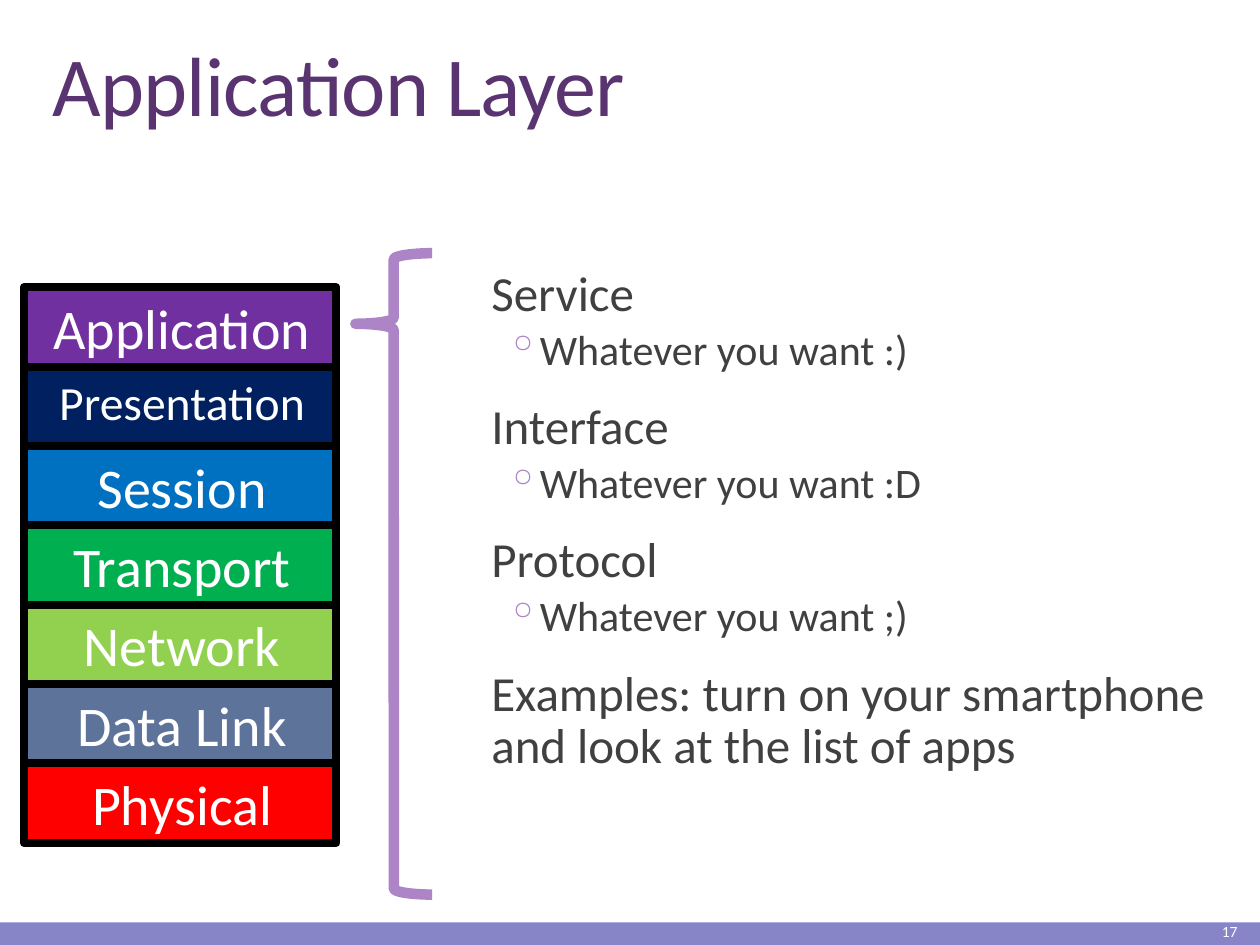
import pptx
import pptx.dml.color
import pptx.enum.shapes
import pptx.enum.text
import pptx.oxml
import pptx.oxml.ns
import pptx.util

Inches = pptx.util.Inches
Pt = pptx.util.Pt
SHAPE = pptx.enum.shapes.MSO_SHAPE
ALIGN = pptx.enum.text.PP_ALIGN
ANCHOR = pptx.enum.text.MSO_ANCHOR

FONT = "Calibri"
WHITE, BLACK = "FFFFFF", "000000"
LILAC = "AD84C6"
BODY_COLOR = "404040"

LAYERS = [
    ("Application", "7030A0"),
    ("Presentation", "002060"),
    ("Session", "0070C0"),
    ("Transport", "00B050"),
    ("Network", "92D050"),
    ("Data Link", "5D739A"),
    ("Physical", "FF0000"),
]
STACK_TOP, LAYER_HEIGHT = 2.28, 0.63

TOPICS = [
    ("Service", "Whatever you want :)"),
    ("Interface", "Whatever you want :D"),
    ("Protocol", "Whatever you want ;)"),
    ("Examples: turn on your smartphone and look at the list of apps", None),
]


def color(value):
    return pptx.dml.color.RGBColor.from_string(value)


def add_shape(slide, kind, box, fill=None, line=None, width=1):
    shape = slide.shapes.add_shape(kind, *map(Inches, box))
    shape.shadow.inherit = False
    if fill:
        shape.fill.solid()
        shape.fill.fore_color.rgb = color(fill)
    else:
        shape.fill.background()
    if line:
        shape.line.color.rgb = color(line)
        shape.line.width = Pt(width)
    else:
        shape.line.fill.background()
    return shape


def add_frame(slide, box, anchor=ANCHOR.TOP, side_inset=0.1):
    """Add a wrapping text box and return its text frame."""
    frame = slide.shapes.add_textbox(*map(Inches, box)).text_frame
    frame.word_wrap = True
    frame.vertical_anchor = anchor
    frame.margin_left = frame.margin_right = Inches(side_inset)
    return frame


def write(frame, text, size, font_color, align=ALIGN.LEFT, level=0, line_spacing=1.0,
          before=0, after=0, margin=0, indent=0, bullet=None, tracking=0):
    """Write one paragraph, reusing the empty first one of the frame."""
    paragraph = frame.paragraphs[0]
    if paragraph.runs:
        paragraph = frame.add_paragraph()
    paragraph.alignment = align
    paragraph.level = level
    paragraph.line_spacing = line_spacing
    paragraph.space_before = Pt(before)
    paragraph.space_after = Pt(after)
    run = paragraph.add_run()
    run.text = text
    run.font.name = FONT
    run.font.size = Pt(size)
    run.font.color.rgb = color(font_color)
    if tracking:
        run.font._element.set("spc", str(int(tracking * 100)))
    properties = paragraph._p.get_or_add_pPr()
    properties.set("marL", str(Inches(margin)))
    properties.set("indent", str(Inches(indent)))
    if bullet:
        namespace = pptx.oxml.ns.nsdecls("a")
        for xml in (f'<a:buClr {namespace}><a:srgbClr val="{LILAC}"/></a:buClr>',
                    f'<a:buChar {namespace} char="{bullet}"/>'):
            properties.append(pptx.oxml.parse_xml(xml))


def add_layer(slide, index, name, fill):
    top = STACK_TOP + index * LAYER_HEIGHT
    add_shape(slide, SHAPE.RECTANGLE, (0.19, top, 2.48, LAYER_HEIGHT), fill, BLACK, 4.5)
    frame = add_frame(slide, (0.16, top, 2.45, LAYER_HEIGHT))
    size = 27.2 if name == "Presentation" else 32
    write(frame, name, size, WHITE, align=ALIGN.CENTER, before=1, margin=0.12)


def add_topics(slide):
    frame = add_frame(slide, (3.8, 1.52, 6, 5.24), ANCHOR.MIDDLE, side_inset=0)
    for heading, detail in TOPICS:
        write(frame, heading, 28, BODY_COLOR, line_spacing=0.9, before=12, after=2,
              margin=0.1)
        if detail:
            write(frame, detail, 24, BODY_COLOR, level=1, line_spacing=0.9, before=2,
                  after=4, margin=0.42, indent=-0.2, bullet="◦")


def main():
    presentation = pptx.Presentation()
    presentation.slide_width = Inches(10)
    presentation.slide_height = Inches(7.5)
    slide = presentation.slides.add_slide(presentation.slide_layouts[6])

    add_shape(slide, SHAPE.RECTANGLE, (0, 7.32, 10, 0.18), "8784C7")
    title = add_frame(slide, (0.32, 0.31, 9.48, 0.8), ANCHOR.BOTTOM)
    write(title, "Application Layer", 48, "5A3471", line_spacing=0.85, tracking=-0.5)
    add_topics(slide)
    number = add_frame(slide, (8.84, 7.28, 1.08, 0.22), ANCHOR.MIDDLE)
    write(number, "17", 8.9, WHITE, align=ALIGN.RIGHT)

    for index, (name, fill) in enumerate(LAYERS):
        add_layer(slide, index, name, fill)
    brace = add_shape(slide, SHAPE.LEFT_BRACE, (2.82, 2.01, 0.61, 5.09), line=LILAC, width=6)
    brace.adjustments[0] = 0.08
    brace.adjustments[1] = 0.11

    presentation.save("out.pptx")


if __name__ == "__main__":
    main()
